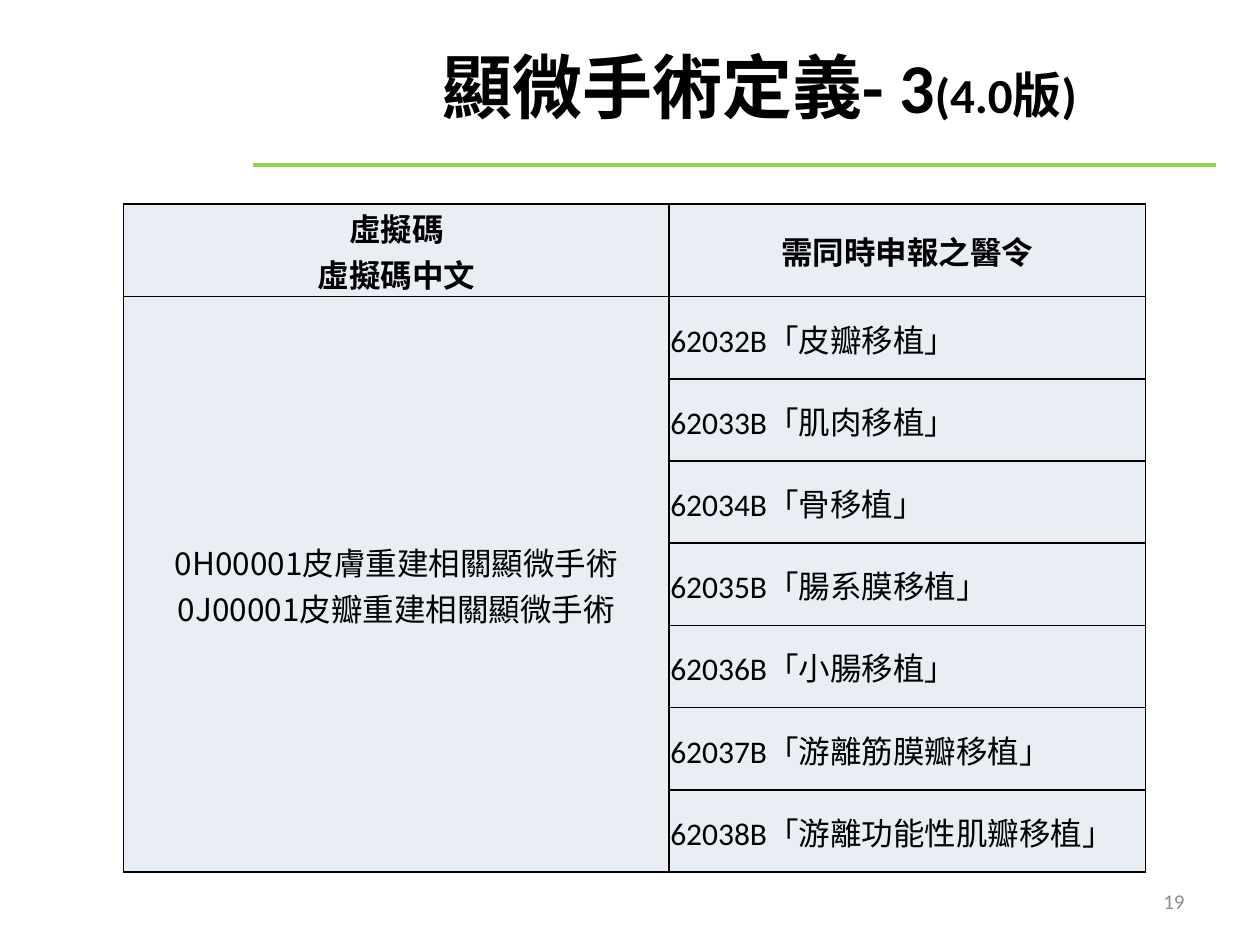
from typing import NamedTuple

from lxml.etree import SubElement
from pptx import Presentation
from pptx.dml.color import RGBColor
from pptx.enum.shapes import MSO_CONNECTOR as Link
from pptx.enum.text import MSO_ANCHOR as Anchor, PP_ALIGN as Align
from pptx.oxml.ns import qn
from pptx.util import Inches, Pt

WIDE, HIGH = 10, 7.5
LATIN, HAN = "Calibri", "Noto Sans CJK SC"
BLACK, GRAY, GREEN, PALE = "000000", "8C8C8C", "92D050", "E9EDF4"


class Box(NamedTuple):
    """Left, top, width and height as shares of the slide."""
    x: float
    y: float
    w: float
    h: float


class Style(NamedTuple):
    size: float
    font: str = LATIN
    bold: bool = False
    color: str = BLACK


def paint(code: str) -> RGBColor:
    return RGBColor.from_string(code)


def spot(box: Box) -> tuple:
    return (Inches(box.x * WIDE), Inches(box.y * HIGH),
            Inches(box.w * WIDE), Inches(box.h * HIGH))


def add_run(para, text: str, style: Style) -> None:
    run = para.add_run()
    run.text = text
    font = run.font
    font.size, font.bold, font.name = Pt(style.size), style.bold, style.font
    font.color.rgb = paint(style.color)
    SubElement(run._r.get_or_add_rPr(), qn("a:ea")).set("typeface", HAN)


def edge(cell) -> None:
    """Draw the four cell borders; they must come before the fill."""
    props = cell._tc.get_or_add_tcPr()
    for side in ("lnL", "lnR", "lnT", "lnB"):
        line = SubElement(props, qn(f"a:{side}"), w=str(Pt(1)))
        fill = SubElement(line, qn("a:solidFill"))
        SubElement(fill, qn("a:srgbClr"), val=BLACK)


def fill_cell(cell, lines: list[str], style: Style, align: Align) -> None:
    edge(cell)
    cell.fill.solid()
    cell.fill.fore_color.rgb = paint(PALE)
    cell.vertical_anchor = Anchor.MIDDLE
    cell.margin_left = cell.margin_right = cell.margin_top = Inches(0.01)
    cell.margin_bottom = 0
    frame = cell.text_frame
    for i, line in enumerate(lines):
        para = frame.add_paragraph() if i else frame.paragraphs[0]
        para.alignment = align
        add_run(para, line, style)


deck = Presentation()
deck.slide_width, deck.slide_height = Inches(WIDE), Inches(HIGH)
slide = deck.slides.add_slide(deck.slide_layouts[5])

# Title
title = slide.shapes.title
title.left, title.top, title.width, title.height = spot(
    Box(0.256, 0.007, 0.694, 0.167))
title.text_frame.vertical_anchor = Anchor.MIDDLE
para = title.text_frame.paragraphs[0]
para.alignment = Align.CENTER
add_run(para, "顯微手術定義- 3", Style(40, bold=True))
add_run(para, "(4.0版)", Style(28, bold=True))

# Rule under the title
left, top, width, _ = spot(Box(0.201, 0.175, 0.764, 0))
rule = slide.shapes.add_connector(Link.STRAIGHT, left, top, left + width, top)
rule.line.color.rgb = paint(GREEN)
rule.line.width = Pt(2.25)
SubElement(rule._element.spPr, qn("a:effectLst"))

# Table: one wide code cell beside the list of orders
orders = [
    "62032B「皮瓣移植」",
    "62033B「肌肉移植」",
    "62034B「骨移植」",
    "62035B「腸系膜移植」",
    "62036B「小腸移植」",
    "62037B「游離筋膜瓣移植」",
    "62038B「游離功能性肌瓣移植」",
]
codes = ["0H00001皮膚重建相關顯微手術", "0J00001皮瓣重建相關顯微手術"]
head, body, item = Style(18, HAN, True), Style(18, HAN), Style(18)
rows = len(orders) + 1
grid = slide.shapes.add_table(rows, 2, *spot(Box(0.098, 0.216, 0.811, 0.696))).table
grid.columns[0].width, grid.columns[1].width = Inches(4.33), Inches(3.78)
fill_cell(grid.cell(0, 0), ["虛擬碼", "虛擬碼中文"], head, Align.CENTER)
fill_cell(grid.cell(0, 1), ["需同時申報之醫令"], head, Align.CENTER)
grid.cell(1, 0).merge(grid.cell(rows - 1, 0))
for row, order in enumerate(orders, 1):
    fill_cell(grid.cell(row, 0), codes if row == 1 else [], body, Align.CENTER)
    fill_cell(grid.cell(row, 1), [order], item, Align.LEFT)

# Page number
page = slide.shapes.add_textbox(*spot(Box(0.717, 0.927, 0.233, 0.053))).text_frame
page.word_wrap = True
page.vertical_anchor = Anchor.MIDDLE
page.paragraphs[0].alignment = Align.RIGHT
add_run(page.paragraphs[0], "19", Style(12, color=GRAY))

deck.save("out.pptx")
